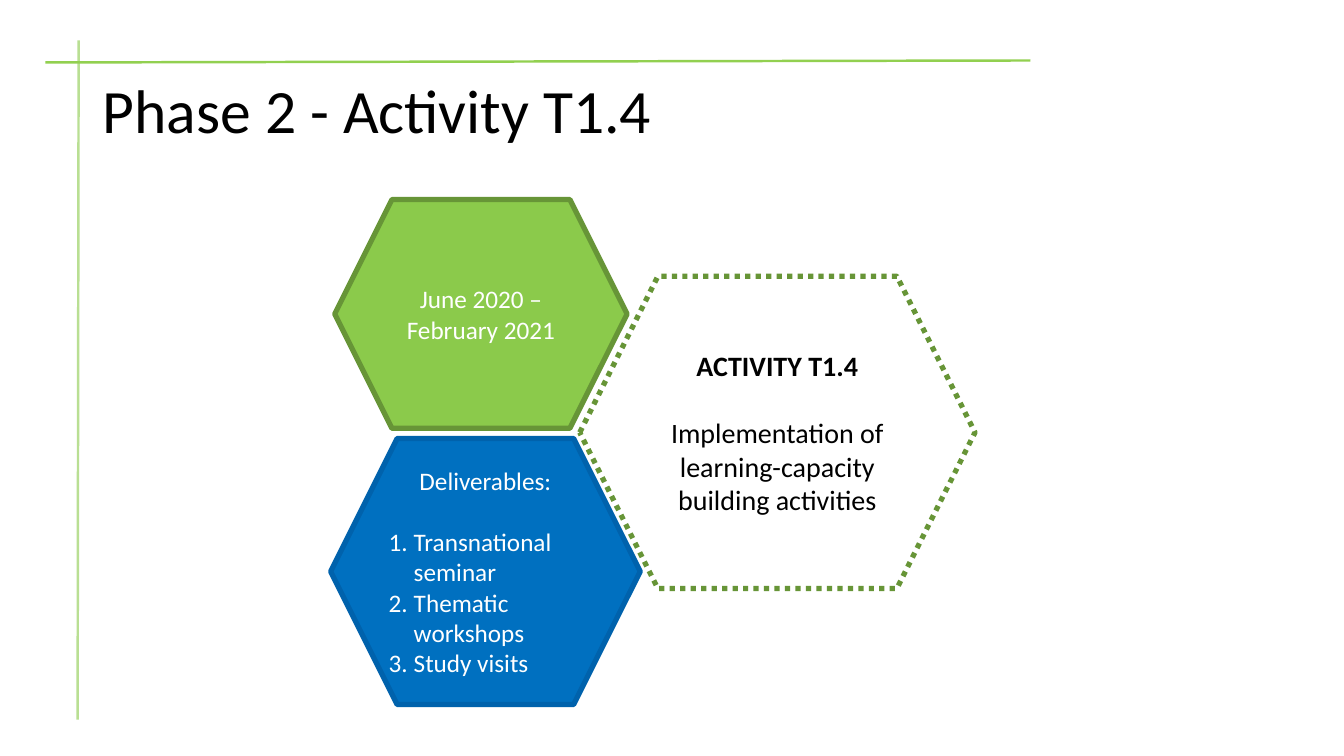
from pptx import Presentation
from pptx.dml.color import RGBColor
from pptx.enum.dml import MSO_LINE
from pptx.enum.shapes import MSO_CONNECTOR, MSO_SHAPE
from pptx.enum.text import MSO_ANCHOR, PP_ALIGN
from pptx.oxml.ns import qn
from pptx.util import Inches, Pt
from lxml import etree

COLORS = {
    "black": "000000", "white": "FFFFFF",
    "rule_pale": "B9DF93", "rule": "92D050",
    "green": "8BCA4B", "green_edge": "679537",
    "blue": "0070C0", "blue_edge": "0062AC",
}


def rgb(name):
    return RGBColor.from_string(COLORS[name])


def style_font(font, size, color, bold=False):
    for key, value in {"name": "Calibri", "size": Pt(size), "bold": bold}.items():
        setattr(font, key, value)
    font.color.rgb = rgb(color)


prs = Presentation()
prs.slide_width, prs.slide_height = Inches(13.33), Inches(7.5)
slide = prs.slides.add_slide(prs.slide_layouts[5])

# Crossing rules at the top left
for ends, color in [((0.78, 0.4, 0.77, 7.14), "rule_pale"),
                    ((0.45, 0.62, 10.22, 0.6), "rule")]:
    rule = slide.shapes.add_connector(MSO_CONNECTOR.STRAIGHT, *map(Inches, ends))
    rule.line.color.rgb = rgb(color)
    rule.line.width = Pt(1.75)
    etree.SubElement(rule._element.spPr, qn("a:effectLst"))

title = slide.shapes.title
title.left, title.top, title.width, title.height = map(Inches, (0.92, 0.4, 11.5, 1.45))
title.text_frame.text = "Phase 2 - Activity T1.4"
title.text_frame.vertical_anchor = MSO_ANCHOR.MIDDLE
heading = title.text_frame.paragraphs[0]
heading.alignment = PP_ALIGN.LEFT
heading.line_spacing = 0.9
style_font(heading.runs[0].font, 44, "black")

# box, fill, edge, text colour, text size, gap before second paragraph, paragraphs (text, style)
hexagons = [
    ((5.75, 2.74, 3.92, 3.1), None, "green_edge", "black", 20, 24,
     [("ACTIVITY T1.4", "bold"),
      ("Implementation of learning-capacity building activities", "plain")]),
    ((3.32, 1.98, 2.9, 2.27), "green", "green_edge", "white", 18, 0,
     [("June 2020 – February 2021", "plain")]),
    ((3.28, 4.35, 3.07, 2.64), "blue", "blue_edge", "white", 18, 22,
     [("Deliverables:", "plain"), ("Transnational seminar", "numbered"),
      ("Thematic workshops", "numbered"), ("Study visits", "numbered")]),
]
for box, fill, edge, text_color, size, gap, lines in hexagons:
    hexagon = slide.shapes.add_shape(MSO_SHAPE.HEXAGON, *map(Inches, box))
    hexagon.shadow.inherit = False
    if fill:
        hexagon.fill.solid()
        hexagon.fill.fore_color.rgb = rgb(fill)
    else:
        hexagon.fill.background()
    hexagon.line.color.rgb = rgb(edge)
    hexagon.line.width = Pt(3.75)
    if not fill:
        hexagon.line.dash_style = MSO_LINE.ROUND_DOT  # written as sysDot

    frame = hexagon.text_frame
    frame.word_wrap = True
    frame.vertical_anchor = MSO_ANCHOR.MIDDLE
    for i, (text, style) in enumerate(lines):
        para = frame.paragraphs[0] if i == 0 else frame.add_paragraph()
        para.alignment = PP_ALIGN.LEFT if style == "numbered" else PP_ALIGN.CENTER
        if i == 1:
            para.space_before = Pt(gap)
        if style == "numbered":
            props = para._p.get_or_add_pPr()
            props.set("marL", str(Inches(0.25)))
            props.set("indent", str(Inches(-0.25)))
            etree.SubElement(props, qn("a:buFont"), typeface="+mj-lt")
            etree.SubElement(props, qn("a:buAutoNum"), type="arabicPeriod")
        run = para.add_run()
        run.text = text
        style_font(run.font, size, text_color, style == "bold")

prs.save("out.pptx")
